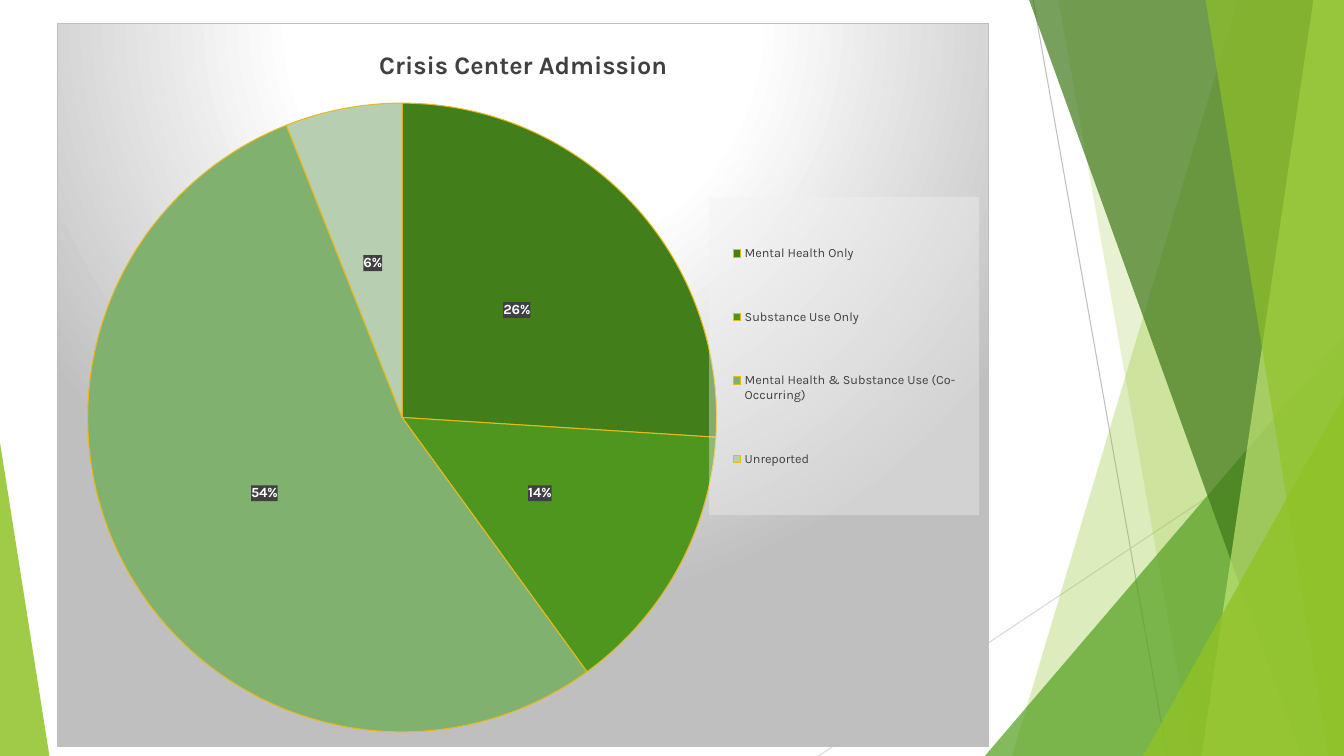
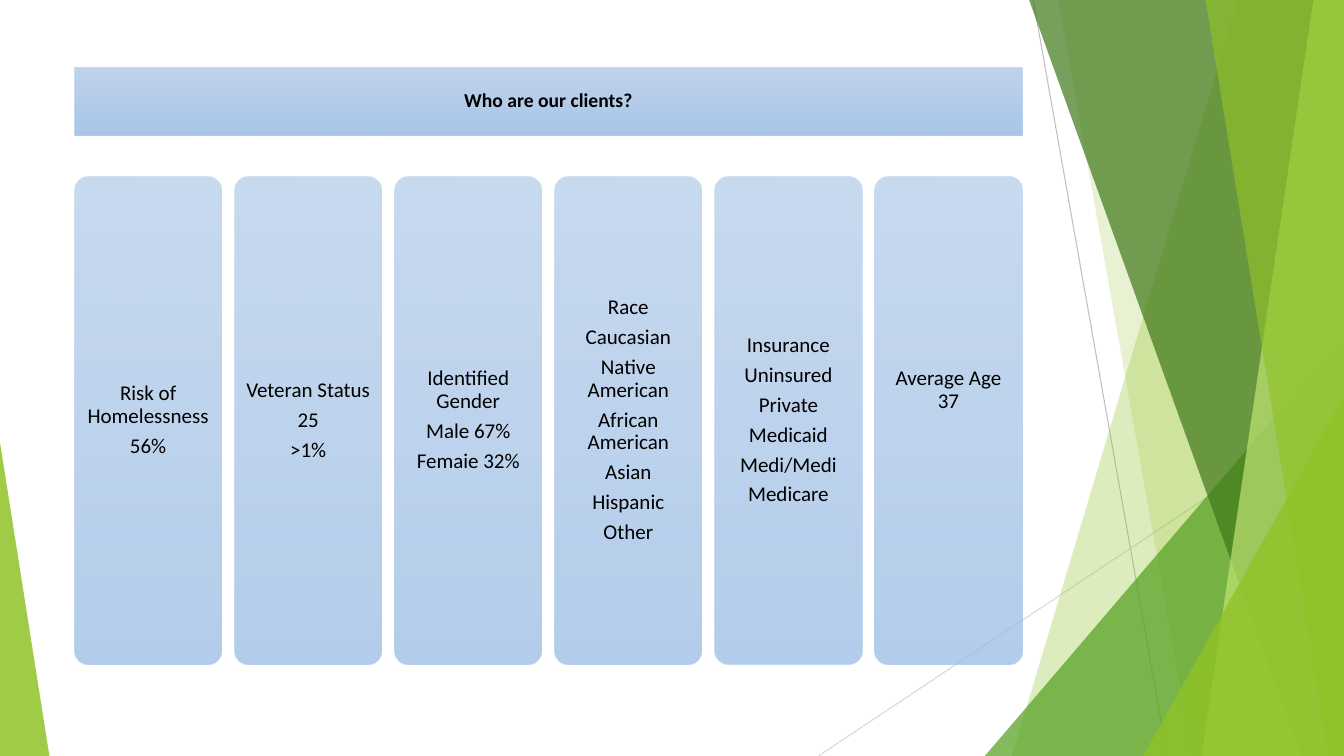
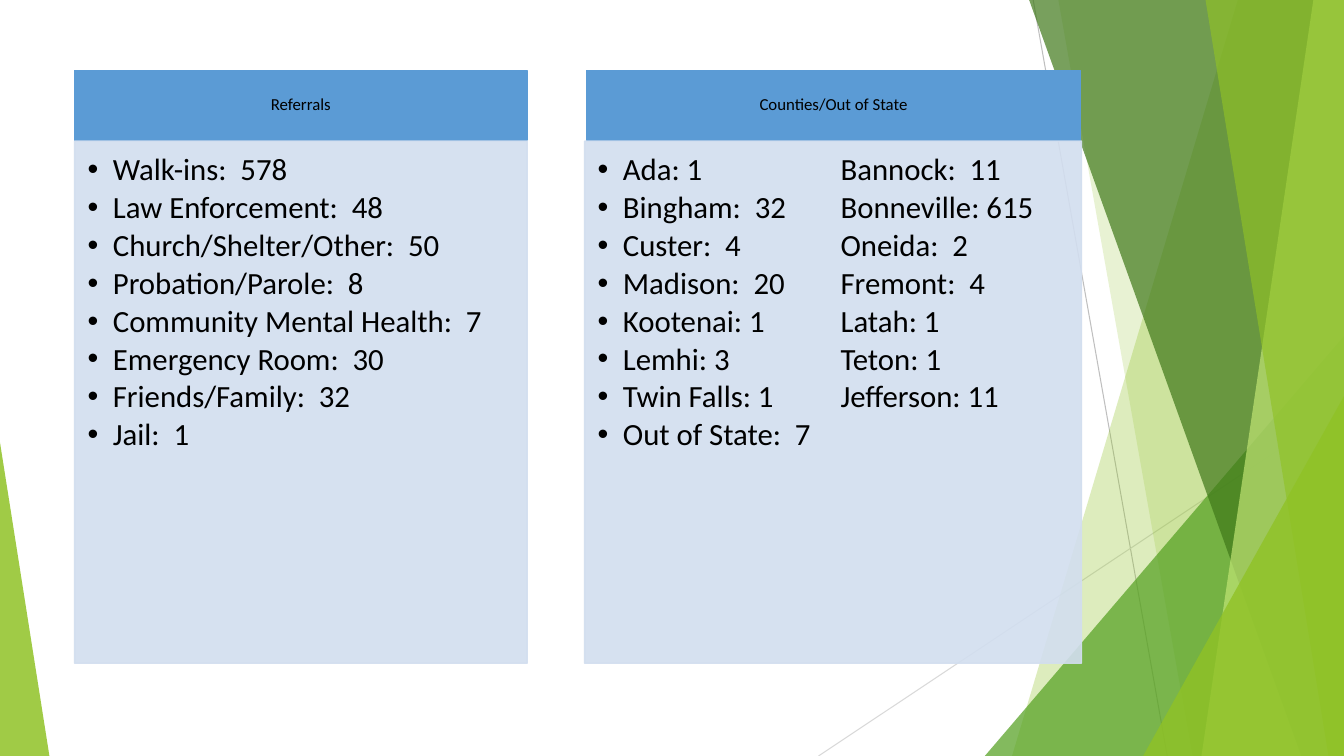
"""Build three slides on crisis center admissions, clients and referrals."""
from pptx import Presentation
from pptx.chart.data import CategoryChartData
from pptx.dml.color import RGBColor
from pptx.enum.chart import XL_CHART_TYPE, XL_LABEL_POSITION, XL_LEGEND_POSITION
from pptx.enum.shapes import MSO_CONNECTOR, MSO_SHAPE
from pptx.enum.text import MSO_ANCHOR, MSO_AUTO_SIZE, PP_ALIGN
from pptx.oxml import parse_xml
from pptx.oxml.ns import nsdecls, qn
from pptx.util import Inches, Pt

PIE = XL_CHART_TYPE.PIE
LABEL_CENTER = XL_LABEL_POSITION.CENTER
LEGEND_RIGHT = XL_LEGEND_POSITION.RIGHT
STRAIGHT = MSO_CONNECTOR.STRAIGHT
ROUNDED = MSO_SHAPE.ROUNDED_RECTANGLE
TRIANGLE = MSO_SHAPE.ISOSCELES_TRIANGLE
TOP, MIDDLE = MSO_ANCHOR.TOP, MSO_ANCHOR.MIDDLE
LEFT, CENTER = PP_ALIGN.LEFT, PP_ALIGN.CENTER
NO_FIT = MSO_AUTO_SIZE.NONE

COLUMNS, ROWS = 80, 45
CELL = Inches(1) / 6
COMPARISON, TITLE_ONLY, BLANK = 4, 5, 6
BODY_FONT, CHART_FONT = "Calibri", "Karla"
COLORS = {
    "ink": "000000", "white": "FFFFFF", "charcoal": "404040",
    "silver": "BFBFBF", "mist": "D9D9D9", "haze": "F2F2F2",
    "lime": "90C226", "leaf": "54A021", "forest": "3F7819", "lemon": "C0E474",
    "sky top": "B1CBE9", "sky middle": "A3C1E5", "sky bottom": "93B9E4",
    "blue": "5B9BD5", "pale blue": "D2DEEF", "gold": "E6B91E",
    "slice 1": "427E1A", "slice 2": "4F961F", "slice 3": "81B16F", "slice 4": "B7CFB0",
}
SKY = [(0, "sky top"), (50, "sky middle"), (100, "sky bottom")]
DOWNWARD = '<a:lin ang="5400000" scaled="0"/>'
FROM_ABOVE = ('<a:path path="circle"><a:fillToRect l="50000" t="-80000" '
              'r="50000" b="180000"/></a:path>')


def color(name):
    """Return the named colour."""
    return RGBColor.from_string(COLORS[name])


def cells(*lengths):
    """Turn grid cells into slide lengths."""
    return [round(length * CELL) for length in lengths]


def solid_xml(name, alpha=100):
    """Return a solid fill as XML text."""
    return (f'<a:solidFill><a:srgbClr val="{COLORS[name]}">'
            f'<a:alpha val="{alpha * 1000}"/></a:srgbClr></a:solidFill>')


def gradient_xml(stops, direction, alpha=100):
    """Return a gradient fill as XML text."""
    marks = "".join(
        f'<a:gs pos="{place * 1000}"><a:srgbClr val="{COLORS[name]}">'
        f'<a:alpha val="{alpha * 1000}"/></a:srgbClr></a:gs>' for place, name in stops)
    return f'<a:gradFill {nsdecls("a")} rotWithShape="1"><a:gsLst>{marks}</a:gsLst>{direction}</a:gradFill>'


def chart_area(content):
    """Return chart shape properties holding the given fill and line."""
    return parse_xml(f'<c:spPr {nsdecls("c", "a")}>{content}</c:spPr>')


def chart_layout(left, top, width, height, target=""):
    """Return a manual chart layout given in shares of the chart."""
    sizes = "".join(f'<c:{tag} val="{share}"/>' for tag, share in
                    zip("xywh", (left, top, width, height)))
    return parse_xml(f'<c:layout {nsdecls("c")}><c:manualLayout>{target}'
                     f'<c:xMode val="edge"/><c:yMode val="edge"/>{sizes}'
                     '</c:manualLayout></c:layout>')


def drop_layout(element):
    """Remove the automatic layout of a chart part."""
    for layout in element.findall(qn("c:layout")):
        element.remove(layout)


def style_font(font, size, name, tint, bold=False):
    """Set the look of a font."""
    font.size, font.name, font.bold = Pt(size), name, bold
    font.color.rgb = color(tint)


class Slides:
    """Hold the deck, its style and the current page."""

    def __init__(self):
        """Start a wide deck."""
        self.deck = Presentation()
        self.deck.slide_width, self.deck.slide_height = cells(COLUMNS, ROWS)
        self.page = None

    def add_page(self, layout):
        """Add a page and make it current."""
        self.page = self.deck.slides.add_slide(self.deck.slide_layouts[layout])

    def place(self, shape, left, top, width, height):
        """Move a shape to a place on the grid."""
        shape.left, shape.top, shape.width, shape.height = cells(left, top, width, height)

    def paint(self, shape, name, alpha=100, edge=False):
        """Fill a shape with one colour, with a matching edge if asked."""
        fills = [shape.fill]
        if edge:
            shape.line.width = Pt(1)
            fills.append(shape.line.fill)
        else:
            shape.line.fill.background()
        for fill in fills:
            fill.solid()
            fill.fore_color.rgb = color(name)
        for tone in shape.element.spPr.iter(qn("a:srgbClr")):
            tone.append(parse_xml(f'<a:alpha {nsdecls("a")} val="{alpha * 1000}"/>'))

    def shade(self, shape, alpha):
        """Fill a shape with the sky gradient."""
        shape.line.fill.background()
        shape.fill.gradient()
        properties = shape.element.spPr
        properties.replace(properties.find(qn("a:gradFill")),
                           parse_xml(gradient_xml(SKY, DOWNWARD, alpha)))

    def set_text(self, shape, lines, size, bold=False, align=CENTER, anchor=MIDDLE,
                 after=0.35, insets=(0.06, 0.06, 0.06, 0.06)):
        """Put paragraphs into a shape."""
        frame = shape.text_frame
        frame.text = "\n".join(lines)
        frame.word_wrap, frame.auto_size = True, NO_FIT
        frame.vertical_anchor = anchor
        (frame.margin_left, frame.margin_top,
         frame.margin_right, frame.margin_bottom) = map(Inches, insets)
        for para in frame.paragraphs:
            para.alignment, para.line_spacing = align, 0.9
            para.space_before, para.space_after = Pt(0), Pt(round(size * after, 1))
            for span in para.runs:
                style_font(span.font, size, BODY_FONT, "ink", bold)

    def line(self, start, end, name):
        """Draw a thin straight line."""
        line = self.page.shapes.add_connector(STRAIGHT, *cells(*start, *end))
        line.line.color.rgb, line.line.width = color(name), Pt(0.75)
        line.element.spPr.append(parse_xml(f'<a:effectLst {nsdecls("a")}/>'))

    def ribbon(self, top_left, bottom_left, name, alpha):
        """Draw a full-height band that ends at the right edge."""
        start, *corners = [cells(*point) for point in (
            (top_left, 0), (COLUMNS, 0), (COLUMNS, ROWS), (bottom_left, ROWS))]
        builder = self.page.shapes.build_freeform(*start, scale=1.0)
        builder.add_line_segments(corners, close=True)
        band = builder.convert_to_shape()
        band.shadow.inherit = False
        self.paint(band, name, alpha)

    def corner(self, left, top, width, peak, name, alpha):
        """Draw a right triangle that stands on the bottom edge."""
        corner = self.page.shapes.add_shape(TRIANGLE, *cells(left, top, width, ROWS - top))
        corner.adjustments[0] = peak
        corner.shadow.inherit = False
        self.paint(corner, name, alpha)

    def decorate(self):
        """Draw the shared background and hand it to the slide master."""
        self.line((61.5, 0), (69.48, ROWS), "silver")
        self.line((COLUMNS, 24.18), (48.72, ROWS), "mist")
        self.ribbon(73.68, 60.24, "lime", 30)
        self.ribbon(63, 70.98, "lime", 20)
        self.corner(58.62, 20, 21.38, 1, "leaf", 72)
        self.ribbon(61.26, 77.46, "forest", 70)
        self.ribbon(78.18, 71.52, "lemon", 70)
        self.ribbon(71.76, 79.08, "lime", 65)
        self.corner(68.04, 23.58, 11.96, 1, "lime", 80)
        self.corner(0, 26.34, 2.94, 0, "lime", 85)
        tree = self.deck.slide_master.element.cSld.spTree
        for number, shape in enumerate(list(self.page.shapes), 100):
            shape.element.xpath(".//p:cNvPr")[0].set("id", str(number))
            tree.append(shape.element)

    def banner(self, text, left, top, width, height):
        """Turn the title into a rounded banner."""
        title = self.page.shapes.title
        self.place(title, left, top, width, height)
        title.element.spPr.append(parse_xml(
            f'<a:prstGeom {nsdecls("a")} prst="roundRect"><a:avLst>'
            '<a:gd name="adj" fmla="val 10000"/></a:avLst></a:prstGeom>'))
        self.shade(title, 80)
        self.set_text(title, [text], 14, bold=True)

    def card(self, lines, lift, left, top, width, height):
        """Draw a rounded card, its text lifted by a larger bottom inset."""
        card = self.page.shapes.add_shape(ROUNDED, *cells(left, top, width, height))
        card.adjustments[0] = 0.1
        card.shadow.inherit = False
        self.shade(card, 70)
        self.set_text(card, lines, 15, insets=(0.06, 0.06, 0.06, 0.06 + lift))

    def heading(self, index, text, *area):
        """Fill a heading placeholder."""
        heading = self.page.placeholders[index]
        self.place(heading, *area)
        self.paint(heading, "blue", edge=True)
        self.set_text(heading, [text], 12, insets=(0.09, 0.05, 0.09, 0.05))

    def bullets(self, index, lines, *area):
        """Fill a list placeholder, with a tab stop for a second column."""
        panel = self.page.placeholders[index]
        self.place(panel, *area)
        self.paint(panel, "pale blue", 90, edge=True)
        self.set_text(panel, lines, 22, align=LEFT, anchor=TOP, after=0.15,
                      insets=(0.13, 0.13, 0.17, 0.19))
        for para in panel.text_frame.paragraphs:
            properties = para._p.get_or_add_pPr()
            properties.set("marL", str(Inches(0.25)))
            properties.set("indent", str(-Inches(0.25)))
            if "\t" in para.text:
                properties.append(parse_xml(
                    f'<a:tabLst {nsdecls("a")}><a:tab pos="{Inches(2.41)}" algn="l"/></a:tabLst>'))

    def pie(self, title, shares, *area):
        """Draw a pie chart with percent labels and a legend panel."""
        data = CategoryChartData()
        data.categories = list(shares)
        data.add_series("Series 1", list(shares.values()))
        chart = self.page.shapes.add_chart(PIE, *cells(*area), data).chart
        style_font(chart.font, 10, CHART_FONT, "ink")
        chart.has_title = True
        chart.chart_title.text_frame.text = title
        for span in chart.chart_title.text_frame.paragraphs[0].runs:
            style_font(span.font, 18, CHART_FONT, "charcoal", True)
        space = chart.element
        backdrop = gradient_xml([(0, "white"), (39, "white"), (100, "silver")], FROM_ABOVE)
        space.find(qn("c:chart")).addnext(chart_area(
            f'{backdrop}<a:ln w="9525">{solid_xml("silver")}</a:ln>'))
        plot_area = space.find(".//" + qn("c:plotArea"))
        drop_layout(plot_area)
        plot_area.insert(0, chart_layout(
            0.03, 0.11, 0.68, 0.87, '<c:layoutTarget val="inner"/>'))
        self.color_slices(chart.plots[0], len(shares))
        self.label_slices(chart.plots[0])
        self.add_legend(chart)

    def color_slices(self, plot, count):
        """Colour each slice and its outline."""
        plot.vary_by_categories = True
        for number in range(count):
            look = plot.series[0].points[number].format
            look.fill.solid()
            look.fill.fore_color.rgb = color(f"slice {number + 1}")
            look.line.color.rgb, look.line.width = color("gold"), Pt(0.75)

    def label_slices(self, plot):
        """Label the slices with percentages on dark tags."""
        plot.has_data_labels = True
        labels = plot.data_labels
        labels.show_percentage, labels.show_value = True, False
        labels.number_format, labels.number_format_is_linked = "0%", False
        labels.position = LABEL_CENTER
        style_font(labels.font, 10, CHART_FONT, "white", True)
        plot._element.find(".//" + qn("c:dLbls")).find(qn("c:numFmt")).addnext(
            chart_area(solid_xml("charcoal", 90)))

    def add_legend(self, chart):
        """Add the legend on a pale panel at the right."""
        chart.has_legend = True
        legend = chart.legend
        legend.position, legend.include_in_layout = LEGEND_RIGHT, False
        style_font(legend.font, 9, CHART_FONT, "charcoal")
        element = chart.element.find(".//" + qn("c:legend"))
        drop_layout(element)
        element.find(qn("c:legendPos")).addnext(chart_layout(0.7, 0.24, 0.29, 0.44))
        element.find(qn("c:overlay")).addnext(chart_area(solid_xml("haze", 39)))


def main():
    """Build and save the deck."""
    slides = Slides()

    slides.add_page(BLANK)
    slides.decorate()
    slides.pie("Crisis Center Admission", {
        "Mental Health Only": 26,
        "Substance Use Only": 14,
        "Mental Health & Substance Use (Co-Occurring)": 54,
        "Unreported": 6,
    }, 3.42, 1.38, 55.44, 43.08)

    slides.add_page(TITLE_ONLY)
    left, total, card_width = 4.44, 56.4, 8.76
    slides.banner("Who are our clients?", left, 4.02, total, 4.02)
    clients = [
        (["Risk of Homelessness", "56%"], 0),
        (["Veteran Status", "25", ">1%"], 0),
        (["Identified Gender", "Male 67%", "Femaie 32%"], 0),
        (["Race", "Caucasian", "Native American", "African American",
          "Asian", "Hispanic", "Other"], 0),
        (["Insurance", "Uninsured", "Private", "Medicaid", "Medi/Medi", "Medicare"], 0),
        (["Average Age 37"], 0.6),
    ]
    pitch = (total - card_width) / (len(clients) - 1)
    for number, (lines, lift) in enumerate(clients):
        slides.card(lines, lift, left + number * pitch, 10.5, card_width, 29.04)

    slides.add_page(COMPARISON)
    title = slides.page.shapes.title.element
    title.getparent().remove(title)
    referrals = ["Walk-ins:  578", "Law Enforcement:  48", "Church/Shelter/Other:  50",
                 "Probation/Parole:  8", "Community Mental Health:  7",
                 "Emergency Room:  30", "Friends/Family:  32", "Jail:  1"]
    counties = [("Ada: 1", "Bannock:  11"), ("Bingham:  32", "Bonneville: 615"),
                ("Custer:  4", "Oneida:  2"), ("Madison:  20", "Fremont:  4"),
                ("Kootenai: 1", "Latah: 1"), ("Lemhi: 3", "Teton: 1"),
                ("Twin Falls: 1", "Jefferson: 11"), ("Out of State:  7",)]
    slides.heading(1, "Referrals", left, 4.2, 26.94, 4.14)
    slides.bullets(2, referrals, left, 8.4, 26.94, 31.08)
    slides.heading(3, "Counties/Out of State", 34.92, 4.2, 29.4, 4.14)
    slides.bullets(4, ["\t".join(pair) for pair in counties], 34.8, 8.4, 29.58, 31.08)

    slides.deck.save("out.pptx")


if __name__ == "__main__":
    main()
